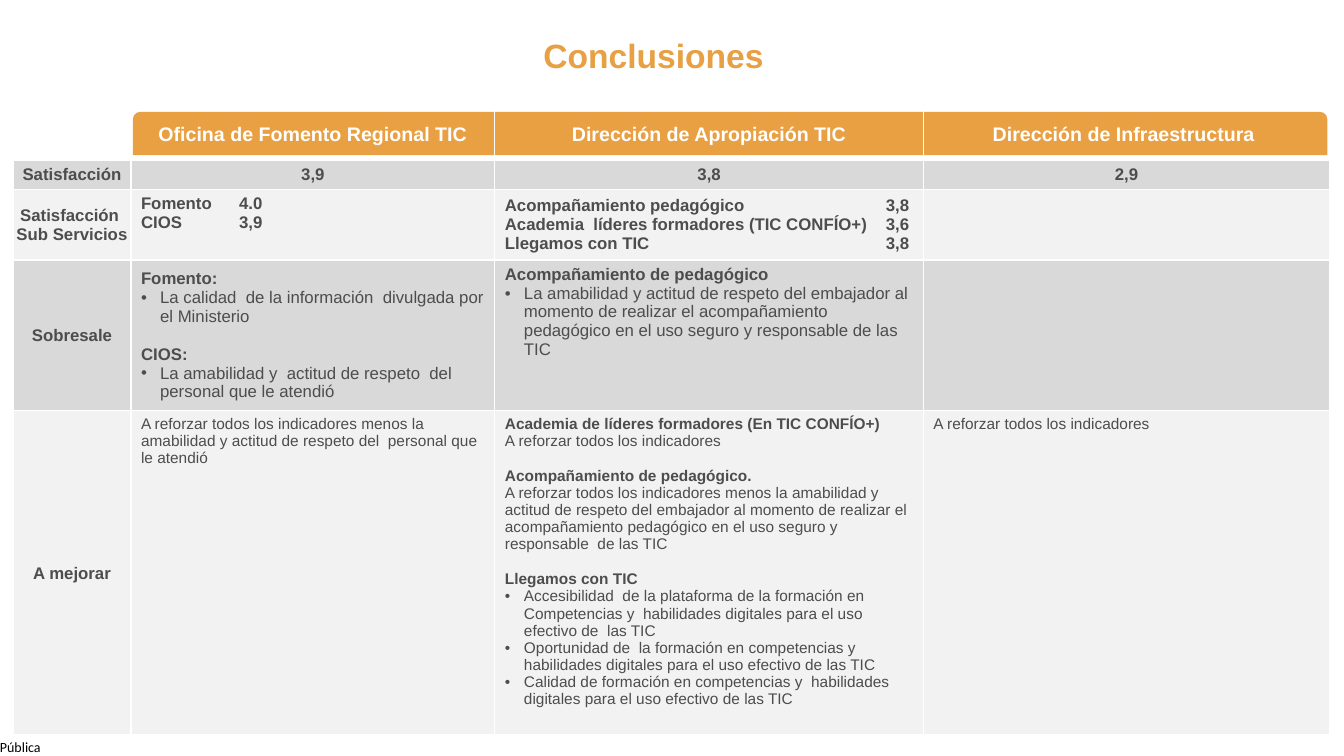
from lxml.etree import SubElement
from pptx import Presentation
from pptx.dml.color import RGBColor
from pptx.enum.shapes import MSO_SHAPE as Preset
from pptx.enum.text import MSO_ANCHOR as Anchor, MSO_AUTO_SIZE as AutoSize, PP_ALIGN as Align
from pptx.oxml.ns import qn
from pptx.util import Cm, Pt

COLORS = {
    "title": "E7A043", "header": "E8A043", "white": "FFFFFF", "black": "000000",
    "text": "4E4C4C", "dark_band": "D9D9D9", "light_band": "F2F2F2",
}
COLUMN_WIDTHS = [2.97, 9.17, 10.8, 10.24]
ROW_HEIGHTS = [1.22, 0.76, 1.78, 3.78, 8.18]
HEADERS = ["Oficina de Fomento Regional TIC", "Dirección de Apropiación TIC",
           "Dirección de Infraestructura "]
LABELS = [["Satisfacción"], ["Satisfacción ", "Sub Servicios"], ["Sobresale"], ["A mejorar"]]
SCORES = ["3,9", "3,8", "2,9"]
SUBSERVICES = [
    (2.47, Anchor.TOP, ["Fomento\t4.0", "CIOS\t3,9"]),
    (9.6, Anchor.MIDDLE, ["Acompañamiento pedagógico\t3,8",
                          "Academia  líderes formadores (TIC CONFÍO+)\t3,6",
                          "Llegamos con TIC\t3,8"]),
]
STRENGTHS = [
    (Anchor.MIDDLE, [
        ("heading", "Fomento:"),
        ("bullet", "La calidad  de la información  divulgada por el Ministerio"),
        ("heading", "CIOS:"),
        ("bullet", "La amabilidad y  actitud de respeto  del personal que le atendió"),
    ]),
    (Anchor.TOP, [
        ("heading", "Acompañamiento de pedagógico"),
        ("bullet", "La amabilidad y actitud de respeto del embajador al momento de realizar "
                   "el acompañamiento pedagógico en el uso seguro y responsable de las TIC"),
    ]),
]
IMPROVEMENTS = [
    [("plain", "A reforzar todos los indicadores menos la amabilidad y actitud de respeto del  "
               "personal que le atendió")],
    [
        ("heading", "Academia de líderes formadores (En TIC CONFÍO+)"),
        ("plain", "A reforzar todos los indicadores"),
        ("heading", "Acompañamiento de pedagógico."),
        ("plain", "A reforzar todos los indicadores menos la amabilidad y actitud de respeto del "
                  "embajador al momento de realizar el acompañamiento pedagógico en el uso seguro "
                  "y responsable  de las TIC"),
        ("heading", "Llegamos con TIC"),
        ("bullet", "Accesibilidad  de la plataforma de la formación en Competencias y  "
                   "habilidades digitales para el uso efectivo de  las TIC"),
        ("bullet", "Oportunidad de  la formación en competencias y habilidades digitales para "
                   "el uso efectivo de las TIC"),
        ("bullet", "Calidad de formación en competencias y  habilidades digitales para el uso "
                   "efectivo de las TIC"),
    ],
    [("plain", "A reforzar todos los indicadores")],
]


def color(name):
    return RGBColor.from_string(COLORS[name])


def set_font(paragraph, size, color_name, bold=False, name="Arial"):
    font = paragraph.font
    font.name, font.size, font.bold = name, Pt(size), bold
    font.color.rgb = color(color_name)


def add_bullet(paragraph):
    properties = paragraph._p.get_or_add_pPr()
    properties.set("marL", str(Cm(0.48)))
    properties.set("indent", str(-Cm(0.48)))
    SubElement(properties, qn("a:buFont"), typeface="Arial")
    SubElement(properties, qn("a:buChar"), char="•")


def add_tab(paragraph, position):
    tabs = SubElement(paragraph._p.get_or_add_pPr(), qn("a:tabLst"))
    SubElement(tabs, qn("a:tab"), pos=str(Cm(position)), algn="l")


def write_lines(cell, lines, size=12, color_name="text", align=Align.LEFT,
                anchor=Anchor.MIDDLE, tab=None):
    cell.vertical_anchor = anchor
    frame = cell.text_frame
    for index, (kind, text) in enumerate(lines):
        paragraph = frame.add_paragraph() if index else frame.paragraphs[0]
        paragraph.text = text
        paragraph.alignment = align
        if kind == "bullet":
            add_bullet(paragraph)
        if tab:
            add_tab(paragraph, tab)
        if kind == "heading" and index and lines[index - 1][0] != "heading":
            paragraph.space_before = Pt(size * 1.15)
        set_font(paragraph, size, color_name, bold=kind == "heading")


def headings(texts):
    return [("heading", text) for text in texts]


def format_cell(cell, row):
    widths = {"lnL": 1, "lnR": 1, "lnT": 3 if row == 1 else 1, "lnB": 3 if row == 0 else 1}
    properties = cell._tc.get_or_add_tcPr()
    for side, width in widths.items():
        line = SubElement(properties, qn(f"a:{side}"), w=str(Pt(width)))
        fill = SubElement(line, qn("a:solidFill"))
        SubElement(fill, qn("a:srgbClr"), val=COLORS["white"])
    if row == 0:
        cell.fill.background()
    else:
        cell.fill.solid()
        cell.fill.fore_color.rgb = color("dark_band" if row % 2 else "light_band")
    set_font(cell.text_frame.paragraphs[0], 12, "text")


def add_table(slide):
    table = slide.shapes.add_table(len(ROW_HEIGHTS), len(COLUMN_WIDTHS), Cm(0.33), Cm(2.79),
                                   Cm(sum(COLUMN_WIDTHS)), Cm(sum(ROW_HEIGHTS))).table
    table.horz_banding = False
    for column, width in zip(table.columns, COLUMN_WIDTHS):
        column.width = Cm(width)
    for row, height in enumerate(ROW_HEIGHTS):
        table.rows[row].height = Cm(height)
        for column in range(len(COLUMN_WIDTHS)):
            format_cell(table.cell(row, column), row)
    return table


def fill_table(table):
    for row, label in enumerate(LABELS, 1):
        cell = table.cell(row, 0)
        cell.margin_left = cell.margin_right = cell.margin_top = Cm(0.03)
        cell.margin_bottom = Cm(0)
        write_lines(cell, headings(label), align=Align.CENTER)
    for column, (header, score) in enumerate(zip(HEADERS, SCORES), 1):
        write_lines(table.cell(0, column), headings([header]), 14, "white", Align.CENTER)
        write_lines(table.cell(1, column), headings([score]), align=Align.CENTER)
    for column, (tab, anchor, lines) in enumerate(SUBSERVICES, 1):
        write_lines(table.cell(2, column), headings(lines), anchor=anchor, tab=tab)
    for column, (anchor, lines) in enumerate(STRENGTHS, 1):
        write_lines(table.cell(3, column), lines, anchor=anchor)
    for column, lines in enumerate(IMPROVEMENTS, 1):
        write_lines(table.cell(4, column), lines, 11, anchor=Anchor.TOP)


def add_classification(slide):
    frame = slide.shapes.add_textbox(Cm(0), Cm(18.62), Cm(1.12), Cm(0.43)).text_frame
    frame.margin_left = frame.margin_right = frame.margin_top = frame.margin_bottom = 0
    frame.word_wrap = False
    frame.text = "Pública"
    set_font(frame.paragraphs[0], 10, "black", name="Calibri")


def format_title(title):
    title.left, title.top, title.width, title.height = Cm(8), Cm(0.74), Cm(16.94), Cm(1.27)
    frame = title.text_frame
    frame.text = "Conclusiones"
    frame.auto_size = AutoSize.NONE
    frame.vertical_anchor = Anchor.MIDDLE
    frame.paragraphs[0].alignment = Align.CENTER
    set_font(frame.paragraphs[0], 24, "title", bold=True)


def add_header_band(slide):
    shape = slide.shapes.add_shape(Preset.ROUND_2_SAME_RECTANGLE,
                                   Cm(3.35), Cm(2.82), Cm(30.1), Cm(1.09))
    shape.shadow.inherit = False
    shape.fill.solid()
    shape.fill.fore_color.rgb = color("header")
    shape.line.fill.background()


def main():
    presentation = Presentation()
    presentation.slide_width, presentation.slide_height = Cm(33.87), Cm(19.05)
    slide = presentation.slides.add_slide(presentation.slide_layouts[5])
    format_title(slide.shapes.title)
    add_classification(slide)
    add_header_band(slide)
    fill_table(add_table(slide))
    presentation.save("out.pptx")


if __name__ == "__main__":
    main()
